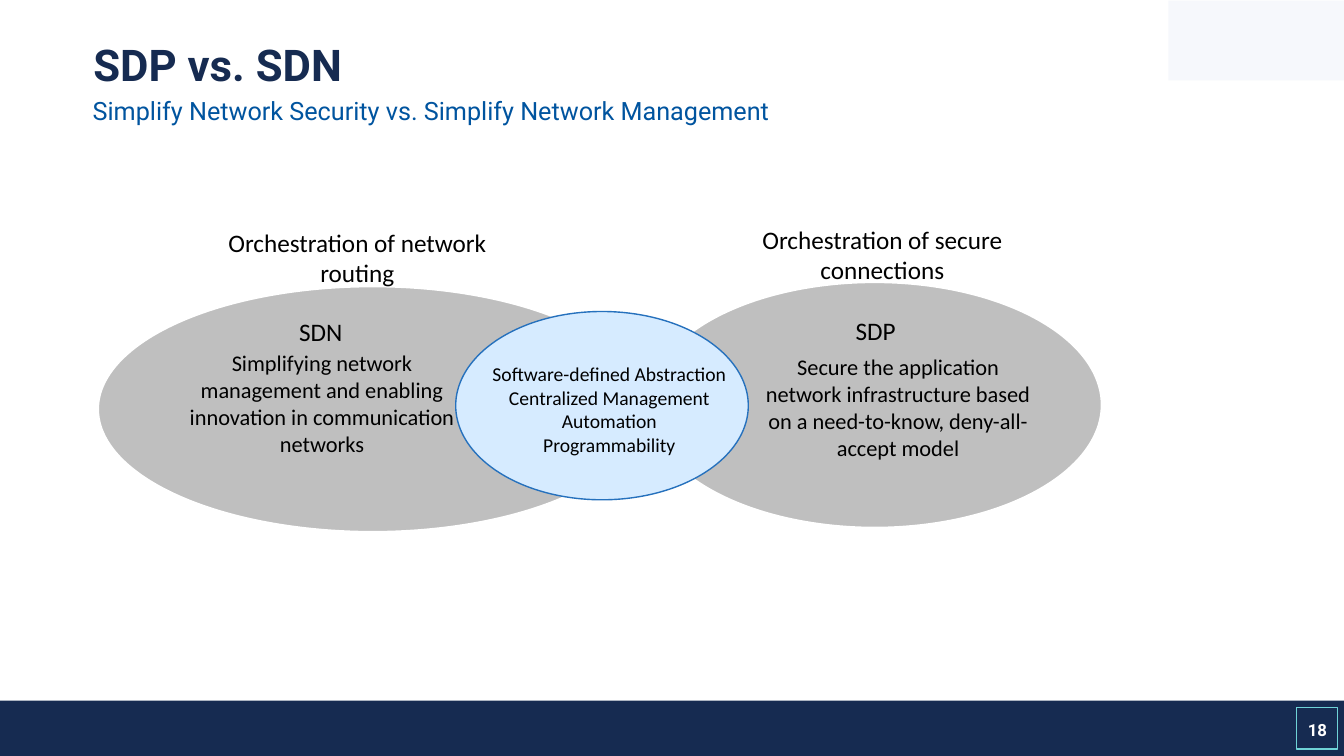
import pptx
import pptx.dml.color
import pptx.enum.shapes
import pptx.enum.text
import pptx.util

Pt = pptx.util.Pt
RGBColor = pptx.dml.color.RGBColor
SHAPE = pptx.enum.shapes.MSO_SHAPE
ALIGN = pptx.enum.text.PP_ALIGN
ANCHOR = pptx.enum.text.MSO_ANCHOR

NAVY = RGBColor(0x16, 0x2B, 0x51)
BLUE = RGBColor(0x00, 0x54, 0x9F)
TEAL = RGBColor(0x6F, 0xD3, 0xD7)
PALE = RGBColor(0xF6, 0xF8, 0xFC)
GREY = RGBColor(0xBF, 0xBF, 0xBF)
SKY = RGBColor(0xD6, 0xEB, 0xFF)
OUTLINE = RGBColor(0x26, 0x71, 0xBD)
WHITE = RGBColor(0xFF, 0xFF, 0xFF)
BLACK = RGBColor(0x00, 0x00, 0x00)

SLIDE_WIDTH, SLIDE_HEIGHT = 960, 540


def format_text(frame, lines, align, font, paragraph=None):
    """Write one paragraph per line and apply the format values."""
    for index, line in enumerate(lines):
        para = frame.paragraphs[0] if index == 0 else frame.add_paragraph()
        para.text = line
        para.alignment = align
        for name, value in (paragraph or {}).items():
            setattr(para, name, value)
        span = para.runs[0]
        for name, value in font.items():
            if name == "color":
                span.font.color.rgb = value
            else:
                setattr(span.font, name, value)


def add_text(page, box, lines, size, align=ALIGN.CENTER, wrap=True,
             anchor=ANCHOR.TOP, **font):
    frame = page.shapes.add_textbox(*map(Pt, box)).text_frame
    frame.word_wrap = wrap
    frame.vertical_anchor = anchor
    values = {"name": "Calibri", "size": Pt(size), "color": BLACK, **font}
    format_text(frame, lines, align, values)


def add_shape(page, kind, box, fill=None, line=None, width=1):
    shape = page.shapes.add_shape(kind, *map(Pt, box))
    shape.shadow.inherit = False
    if fill is None:
        shape.fill.background()
    else:
        shape.fill.solid()
        shape.fill.fore_color.rgb = fill
    if line is None:
        shape.line.fill.background()
    else:
        shape.line.color.rgb = line
        shape.line.width = Pt(width)


def draw_footer(page, box):
    left, top, width, height = box
    right = left + width
    add_shape(page, SHAPE.RECTANGLE, box, NAVY)
    add_shape(page, SHAPE.RECTANGLE, (right - 34, top + 5, 29.5, 29.5), line=TEAL)
    add_text(page, (right - 38, top + 6.5, 38, 29), ["18"], 12,
             anchor=ANCHOR.MIDDLE, name="Roboto", color=WHITE, bold=True)


def draw_header(page, box):
    left, top, width, height = box
    title, subtitle = page.shapes.title, page.placeholders[1]
    rows = [
        (title, (left, top, width, 40), "SDP vs. SDN", ANCHOR.MIDDLE, 0.8,
         {"size": Pt(31.2), "color": NAVY, "bold": True}),
        (subtitle, (left - 0.5, top + 33, width, height - 33),
         "Simplify Network Security vs. Simplify Network Management",
         ANCHOR.TOP, 1.1, {"size": Pt(18), "color": BLUE}),
    ]
    for holder, place, text, anchor, spacing, font in rows:
        for name, value in zip(("left", "top", "width", "height"), place):
            setattr(holder, name, Pt(value))
        frame = holder.text_frame
        frame.word_wrap = True
        frame.auto_size = pptx.enum.text.MSO_AUTO_SIZE.NONE
        frame.vertical_anchor = anchor
        # Switch off the bullet and indent of the template
        properties = frame.paragraphs[0]._p.get_or_add_pPr()
        properties.set("marL", "0")
        properties.set("indent", "0")
        properties.append(pptx.oxml.parse_xml(
            '<a:buNone xmlns:a="http://schemas.openxmlformats.org/drawingml/2006/main"/>'))
        format_text(frame, [text], ALIGN.LEFT, {"name": "Roboto", **font},
                    {"line_spacing": spacing, "space_before": Pt(0)})


def draw_concept(page, box, caption, heading, body):
    """Grey ellipse; each text comes with its offset from the box corner."""
    left, top, width, height = box
    add_shape(page, SHAPE.OVAL, box, GREY, WHITE, 1.5)
    parts = [(caption, 206.5, 51, 18, ALIGN.CENTER),
             (heading, 65, 29, 18, ALIGN.LEFT),
             (body, 208, 85, 16, ALIGN.CENTER)]
    for (across, down, text), part_width, part_height, size, align in parts:
        place = (left + across, top + down, part_width, part_height)
        add_text(page, place, [text], size, align)


def draw_overlap(page, box):
    left, top, width, height = box
    add_shape(page, SHAPE.OVAL, box, SKY, OUTLINE)
    add_text(page, (left + 18, top + 32.5, 183.5, 75),
             ["Software-defined Abstraction", "Centralized Management",
              "Automation", "Programmability"], 14, wrap=False)


def main():
    deck = pptx.Presentation()
    deck.slide_width, deck.slide_height = Pt(SLIDE_WIDTH), Pt(SLIDE_HEIGHT)
    page = deck.slides.add_slide(deck.slide_layouts[1])

    # Frame of the page
    draw_footer(page, (0, 500.5, SLIDE_WIDTH, 39.5))
    add_shape(page, SHAPE.RECTANGLE, (834.5, 0.5, 125.5, 57), PALE)
    draw_header(page, (59.5, 29, 850, 74))

    # Two concepts and what they share
    draw_concept(
        page, (70, 204.5, 392.5, 175.5),
        (82, -46, "Orchestration of network routing"),
        (136.5, 18, "SDN"),
        (56, 41.5, "Simplifying network management and enabling "
                   "innovation in communication networks"))
    draw_concept(
        page, (462.5, 201.5, 324.5, 175.5),
        (64.5, -45, "Orchestration of secure connections"),
        (141.5, 20, "SDP"),
        (75, 47.5, "Secure the application network infrastructure based "
                   "on a need-to-know, deny-all-accept model"))
    draw_overlap(page, (325.5, 222.5, 209, 134.5))

    deck.save("out.pptx")


if __name__ == "__main__":
    main()
